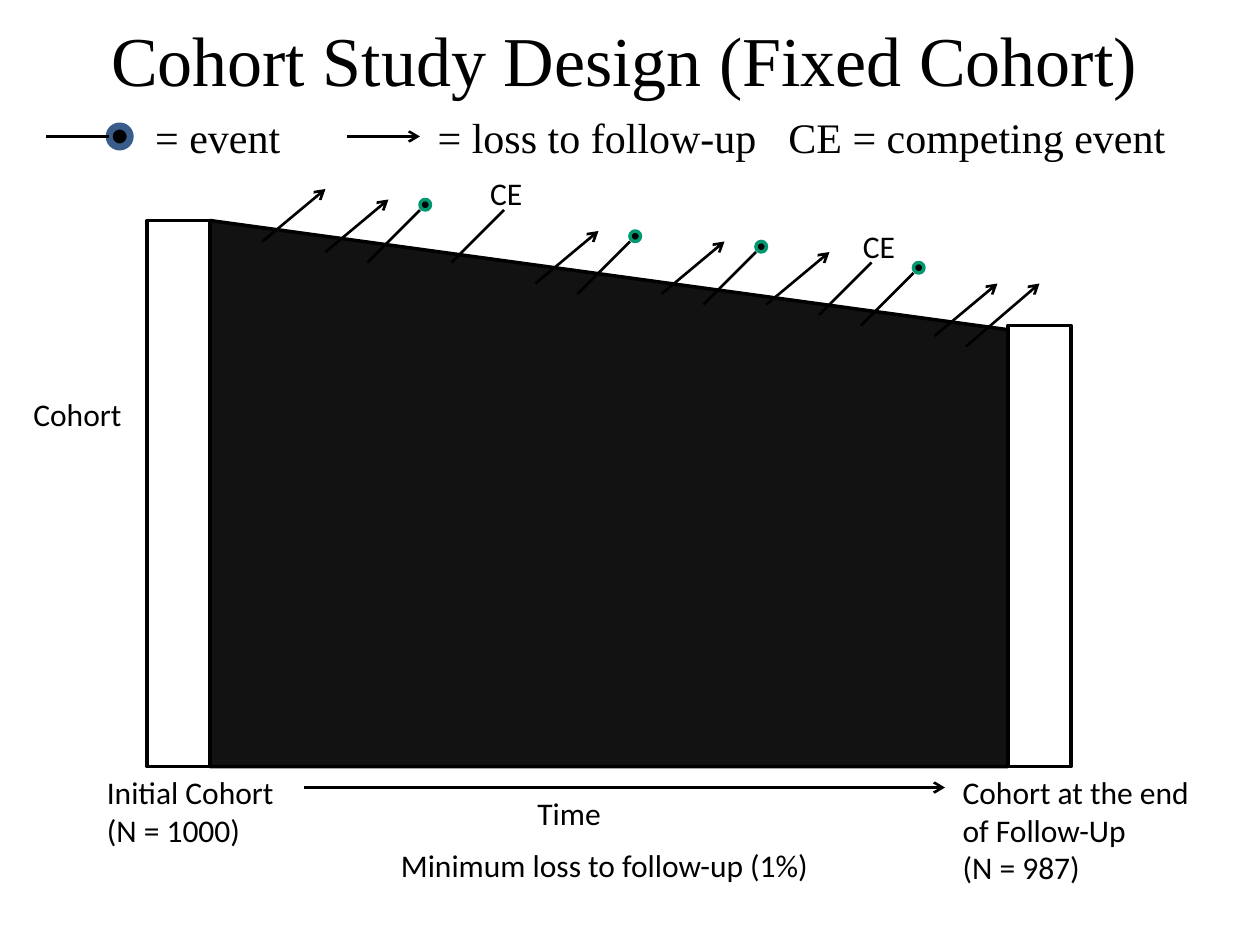
"""Build the fixed-cohort study design slide on a grid of twelfths of an inch."""
from dataclasses import dataclass

from lxml import etree
from pptx import Presentation
from pptx.dml.color import RGBColor
from pptx.enum.shapes import MSO_CONNECTOR, MSO_SHAPE
from pptx.enum.text import MSO_ANCHOR, MSO_AUTO_SIZE
from pptx.oxml.ns import qn
from pptx.util import Cm, Pt

STRAIGHT = MSO_CONNECTOR.STRAIGHT
MANUAL_INPUT = MSO_SHAPE.FLOWCHART_MANUAL_INPUT
RECTANGLE = MSO_SHAPE.RECTANGLE
OVAL = MSO_SHAPE.OVAL
MIDDLE = MSO_ANCHOR.MIDDLE
GROW = MSO_AUTO_SIZE.SHAPE_TO_FIT_TEXT
STEP = 2.54 / 12


@dataclass(frozen=True)
class Theme:
    ink: RGBColor = RGBColor(0, 0, 0)
    cohort: RGBColor = RGBColor(0x12, 0x12, 0x12)
    event: RGBColor = RGBColor(0x00, 0x97, 0x71)
    legend_event: RGBColor = RGBColor(0x38, 0x5D, 0x8A)
    serif: str = "Times New Roman"
    sans: str = "Calibri"
    title: int = 40
    legend: int = 24
    label: int = 18


theme = Theme()


def grid(*steps):
    return [Cm(step * STEP) for step in steps]


def add_text(box, lines, font, size):
    label = slide.shapes.add_textbox(*grid(*box))
    frame = label.text_frame
    frame.word_wrap = False
    frame.auto_size = GROW
    for index, line in enumerate(lines):
        paragraph = frame.paragraphs[0] if index == 0 else frame.add_paragraph()
        run = paragraph.add_run()
        run.text = line
        run.font.name = font
        run.font.size = Pt(size)
        run.font.color.rgb = theme.ink
    return frame


deck = Presentation()
deck.slide_width, deck.slide_height = grid(120, 90)
slide = deck.slides.add_slide(deck.slide_layouts[6])

losses = [(25, 23, 31, 18), (31, 24, 37, 19), (51, 27, 57, 22),
          (63, 28, 69, 23), (73, 29, 79, 24), (89, 32, 95, 27),
          (92, 33, 99, 27)]
events = [(35, 25, 40, 20), (55, 28, 60, 23), (67, 29, 72, 24),
          (82, 31, 87, 26)]
competing = [(43, 25, 48, 20), (78, 30, 83, 25)]
time_axis = (29, 75, 90, 75)
legend_event = (4.4, 13, 10.4, 13)
legend_loss = (33, 13, 40, 13)

areas = [
    (MANUAL_INPUT, (20, 21, 76, 52), theme.cohort, theme.ink, 2),
    (RECTANGLE, (96, 31, 6, 42), None, theme.ink, 2),
    (RECTANGLE, (14, 21, 6, 52), None, theme.ink, 2),
    (OVAL, (10.4, 12, 2, 2), theme.ink, theme.legend_event, 4),
]
areas += [(OVAL, (x, y - 1, 1, 1), theme.ink, theme.event, 2)
          for _, _, x, y in events]
for kind, box, fill, outline, weight in areas:
    area = slide.shapes.add_shape(kind, *grid(*box))
    area.shadow.inherit = False
    if fill is None:
        area.fill.background()
    else:
        area.fill.solid()
        area.fill.fore_color.rgb = fill
    area.line.color.rgb = outline
    area.line.width = Pt(weight)
    if kind == MANUAL_INPUT:
        area.element.spPr.find(qn("a:xfrm")).set("flipH", "1")

arrows = losses + [time_axis, legend_loss]
for ends in arrows + events + competing + [legend_event]:
    stroke = slide.shapes.add_connector(STRAIGHT, *grid(*ends))
    stroke.line.color.rgb = theme.ink
    stroke.line.width = Pt(2 if ends == legend_event else 1.5)
    if ends in arrows:
        etree.SubElement(stroke.line._get_or_add_ln(), qn("a:tailEnd"), type="arrow")
    etree.SubElement(stroke.element.spPr, qn("a:effectLst"))

labels = [
    ((2, 37, 10.9, 4.8), ["Cohort"]),
    ((9, 73, 18.5, 8.5), ["Initial Cohort", "(N = 1000)"]),
    ((90.5, 73, 24.2, 12.1), ["Cohort at the end", "of Follow-Up", "(N = 987)"]),
    ((50, 75, 8.5, 4.8), ["Time"]),
    ((37, 80, 41.8, 4.8), ["Minimum loss to follow-up (1%)"]),
    ((45.5, 16, 5.5, 4.8), ["CE"]),
    ((81, 21, 5.5, 4.8), ["CE"]),
]
for box, lines in labels:
    add_text(box, lines, theme.sans, theme.label)

add_text((9.4, 1, 101.2, 9.2), ["Cohort Study Design (Fixed Cohort)"],
         theme.serif, theme.title)

legend_text = "\t= event\t= loss to follow-up\tCE = competing event"
legend = add_text((4, 10, 110.8, 6), [legend_text], theme.serif, theme.legend)
legend.word_wrap = True
legend.vertical_anchor = MIDDLE
tab_list = etree.SubElement(legend.paragraphs[0]._p.get_or_add_pPr(), qn("a:tabLst"))
for position in grid(9.6, 36.5, 69.9):
    etree.SubElement(tab_list, qn("a:tab"), pos=str(position), algn="l")

deck.save("out.pptx")
